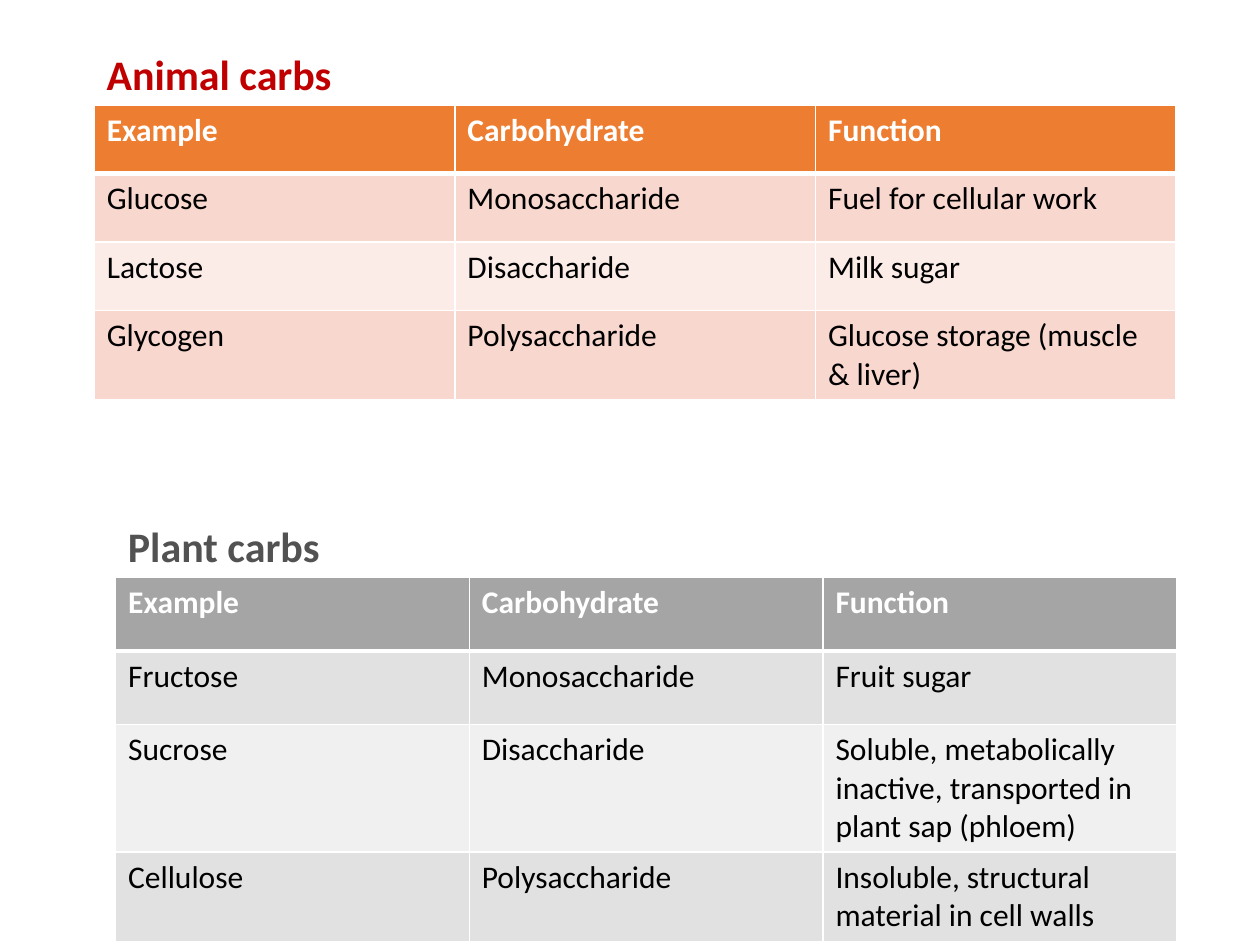
from dataclasses import dataclass

from lxml.etree import SubElement
from pptx import Presentation
from pptx.dml.color import RGBColor as RGB
from pptx.enum.text import MSO_AUTO_SIZE as AutoSize
from pptx.oxml.ns import qn
from pptx.slide import Slide
from pptx.util import Cm, Pt

COLORS = {
    "white": "FFFFFF", "black": "000000",
    "red": "C00000", "orange": "ED7D31", "peach": "F8D7CE", "blush": "FCECE8",
    "dark": "525252", "gray": "A5A5A5", "silver": "E1E1E1", "mist": "F0F0F0",
}
HEADER = ("Example", "Carbohydrate", "Function")
ANIMAL = [
    HEADER,
    ("Glucose", "Monosaccharide", "Fuel for cellular work"),
    ("Lactose", "Disaccharide", "Milk sugar"),
    ("Glycogen", "Polysaccharide", "Glucose storage (muscle & liver)"),
]
PLANT = [
    HEADER,
    ("Fructose", "Monosaccharide", "Fruit sugar"),
    ("Sucrose", "Disaccharide", "Soluble, metabolically inactive, transported in plant sap (phloem)"),
    ("Cellulose", "Polysaccharide", "Insoluble, structural material in cell walls"),
]


@dataclass
class Deck:
    s: Slide
    font: str = "Calibri"
    title_size: int = 24
    cell_size: int = 18

    def add_text(self, tf, text, size, color, bold):
        tf.word_wrap = True
        r = tf.paragraphs[0].add_run()
        r.text = text
        for name, value in {"name": self.font, "size": Pt(size), "bold": bold}.items():
            setattr(r.font, name, value)
        r.font.color.rgb = RGB.from_string(COLORS[color])

    def title(self, text, x, y, w, color):
        tf = self.s.shapes.add_textbox(Cm(x), Cm(y), Cm(w), Cm(1.28)).text_frame
        self.add_text(tf, text, self.title_size, color, True)
        tf.auto_size = AutoSize.SHAPE_TO_FIT_TEXT

    def border(self, cell, side, width):
        ln = SubElement(cell._tc.get_or_add_tcPr(), qn(f"a:ln{side}"), w=str(Pt(width)))
        fill = SubElement(ln, qn("a:solidFill"))
        SubElement(fill, qn("a:srgbClr"), val=COLORS["white"])

    def table(self, rows, x, y, col_w, row_h, fills):
        n, m = len(rows), len(rows[0])
        t = self.s.shapes.add_table(n, m, Cm(x), Cm(y), Cm(col_w * m), Cm(row_h * n)).table
        for col in t.columns:
            col.width = Cm(col_w)
        head, odd, even = fills
        for i, row in enumerate(rows):
            t.rows[i].height = Cm(row_h)
            fill = head if i == 0 else odd if i % 2 else even
            widths = {"L": 1, "R": 1, "T": 3 if i == 1 else 1, "B": 3 if i == 0 else 1}
            for j, text in enumerate(row):
                cell = t.cell(i, j)
                for side, width in widths.items():
                    self.border(cell, side, width)
                cell.fill.solid()
                cell.fill.fore_color.rgb = RGB.from_string(COLORS[fill])
                color = "black" if i else "white"
                self.add_text(cell.text_frame, text, self.cell_size, color, i == 0)


def main():
    prs = Presentation()
    prs.slide_width, prs.slide_height = Cm(25.4), Cm(19.05)
    deck = Deck(prs.slides.add_slide(prs.slide_layouts[6]))
    deck.table(ANIMAL, 1.9, 2.12, 7.27, 1.38, ("orange", "peach", "blush"))
    deck.table(PLANT, 2.33, 11.64, 7.13, 1.48, ("gray", "silver", "mist"))
    deck.title("Animal carbs", 1.9, 0.85, 7.41, "red")
    deck.title("Plant carbs", 2.33, 10.37, 6.14, "dark")
    prs.save("out.pptx")


if __name__ == "__main__":
    main()
